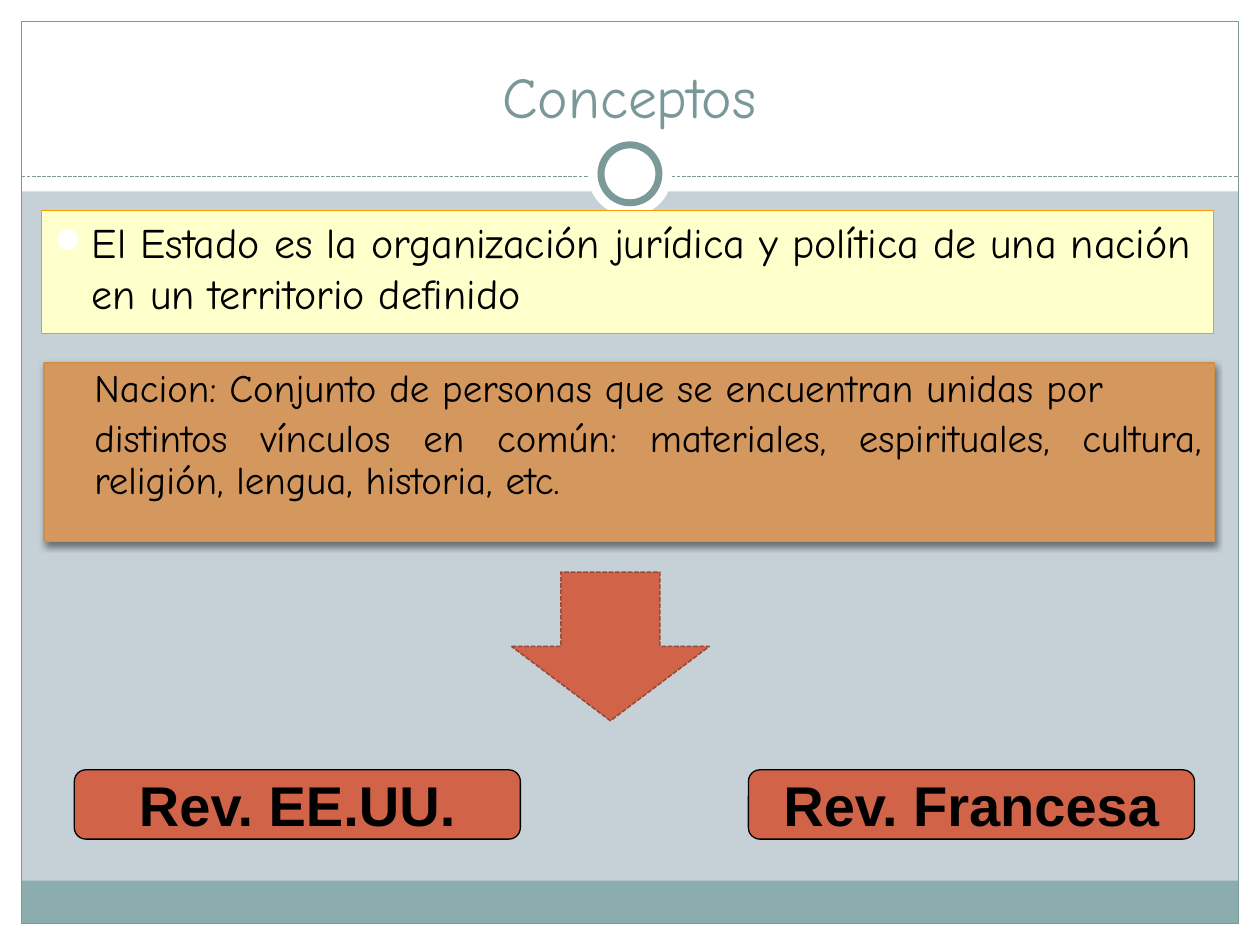
from lxml.etree import SubElement
from pptx import Presentation
from pptx.dml.color import RGBColor
from pptx.enum.dml import MSO_LINE
from pptx.enum.shapes import MSO_CONNECTOR, MSO_SHAPE as Shape
from pptx.enum.text import MSO_ANCHOR as Anchor, PP_ALIGN as Align
from pptx.oxml.ns import qn
from pptx.util import Emu, Inches, Pt

WIDTH, HEIGHT = 10, 7.5
MARGIN = 0.17
INNER_WIDTH = WIDTH - 2 * MARGIN
HEADER_HEIGHT = 1.52
DIVIDER_Y = 1.4
RING_Y = 1.38

WHITE = RGBColor(0xFF, 0xFF, 0xFF)
BLACK = RGBColor(0x00, 0x00, 0x00)
BACKGROUND = RGBColor(0xC5, 0xD1, 0xD7)
FOOTER = RGBColor(0x8C, 0xAD, 0xAE)
FRAME = RGBColor(0x7C, 0x99, 0x9A)
TITLE = RGBColor(0x7B, 0x98, 0x99)
CREAM = RGBColor(0xFF, 0xFF, 0xCC)
ORANGE = RGBColor(0xFF, 0x99, 0x00)
TAN = RGBColor(0xD4, 0x98, 0x5F)
TAN_EDGE = RGBColor(0xD1, 0x90, 0x49)
RED = RGBColor(0xD1, 0x63, 0x49)
RED_EDGE = RGBColor(0x9B, 0x49, 0x36)


def add_box(page, kind, left, top, width, height, fill=None, line=None,
            line_width=0.75, dash=None):
    box = page.shapes.add_shape(kind, Inches(left), Inches(top),
                                Inches(width), Inches(height))
    box.shadow.inherit = False
    if fill is None:
        box.fill.background()
    else:
        box.fill.solid()
        box.fill.fore_color.rgb = fill
    if line is None:
        box.line.fill.background()
    else:
        box.line.color.rgb = line
        box.line.width = Pt(line_width)
        box.line.dash_style = dash
    return box


def add_circle(page, diameter, **style):
    """Draw a white circle centred on the header's ring position."""
    return add_box(page, Shape.OVAL, (WIDTH - diameter) / 2,
                   RING_Y - diameter / 2, diameter, diameter,
                   fill=WHITE, **style)


def write_text(box, *lines, size, font="Comic Neue", color=BLACK, bold=False,
               align=Align.LEFT, anchor=Anchor.TOP, wrap=True, spacing=None,
               before=0, indent=0, bullet=None):
    frame = box.text_frame
    frame.word_wrap = wrap
    frame.vertical_anchor = anchor
    for number, line in enumerate(lines):
        para = frame.add_paragraph() if number else frame.paragraphs[0]
        para.alignment = align
        para.line_spacing = spacing
        para.space_before = Pt(before)
        props = para._p.get_or_add_pPr()
        props.set("marL", str(Inches(indent)))
        if bullet:
            props.set("indent", str(-Inches(indent)))
            tint = SubElement(props, qn("a:buClr"))
            SubElement(tint, qn("a:srgbClr"), val=str(WHITE))
            SubElement(props, qn("a:buSzPct"), val="85000")
            SubElement(props, qn("a:buChar"), char=bullet)
        span = para.add_run()
        span.text = line
        span.font.name = font
        span.font.size = Pt(size)
        span.font.bold = bold
        span.font.color.rgb = color


def add_shadow(box):
    effects = box._element.spPr.find(qn("a:effectLst"))
    shadow = SubElement(effects, qn("a:outerShdw"), blurRad=str(Pt(4)),
                        dist=str(Pt(2)), dir="5400000", rotWithShape="0")
    tint = SubElement(shadow, qn("a:srgbClr"), val=str(BLACK))
    SubElement(tint, qn("a:alpha"), val="45000")


def add_divider(page):
    y = Inches(DIVIDER_Y)
    divider = page.shapes.add_connector(
        MSO_CONNECTOR.STRAIGHT, Inches(MARGIN), y, Inches(WIDTH - MARGIN), y)
    divider.line.color.rgb = FRAME
    divider.line.width = Pt(0.75)
    divider.line.dash_style = MSO_LINE.SQUARE_DOT
    SubElement(divider._element.spPr, qn("a:effectLst"))


def add_frame(page):
    bottom = HEIGHT - MARGIN
    for area in ((0, bottom, WIDTH, MARGIN), (0, 0, WIDTH, HEADER_HEIGHT),
                 (0, 0, MARGIN, HEIGHT), (WIDTH - MARGIN, 0, MARGIN, HEIGHT)):
        add_box(page, Shape.RECTANGLE, *area, fill=WHITE)
    add_box(page, Shape.RECTANGLE, MARGIN, bottom - 0.34, INNER_WIDTH, 0.34,
            fill=FOOTER)
    add_box(page, Shape.RECTANGLE, MARGIN, MARGIN, INNER_WIDTH,
            HEIGHT - 2 * MARGIN, line=FRAME)
    add_divider(page)
    add_circle(page, 0.67)
    add_circle(page, 0.46, line=FRAME, line_width=4)


def add_title(page, text):
    box = page.shapes.add_textbox(Inches(0.33), Inches(0.25),
                                  Inches(9.33), Inches(0.83))
    write_text(box, text, size=33, color=TITLE, align=Align.CENTER,
               anchor=Anchor.BOTTOM)


def add_definitions(page):
    state = add_box(page, Shape.RECTANGLE, 0.33, 1.67, 9.3, 0.98,
                    fill=CREAM, line=ORANGE)
    write_text(state, "El Estado es la organización jurídica y política de "
               "una nación en un territorio definido",
               size=24, before=4.8, indent=0.3, bullet="●")
    nation = add_box(page, Shape.RECTANGLE, 0.35, 2.88, 9.29, 1.42,
                     fill=TAN, line=TAN_EDGE)
    add_shadow(nation)
    write_text(nation,
               "Nacion: Conjunto de personas que se encuentran unidas por",
               "distintos vínculos en común: materiales, espirituales, "
               "cultura, religión, lengua, historia, etc.",
               size=22.2, align=Align.JUSTIFY, spacing=0.9, before=4.4,
               indent=0.3)


def add_revolutions(page):
    add_box(page, Shape.DOWN_ARROW, 4.06, 4.54, 1.57, 1.18, fill=RED,
            line=RED_EDGE, line_width=0.9, dash=MSO_LINE.SQUARE_DOT)
    for column, name in enumerate(("Rev. EE.UU.", "Rev. Francesa")):
        box = add_box(page, Shape.ROUNDED_RECTANGLE, 0.59 + 5.35 * column,
                      6.11, 3.54, 0.55, fill=RED, line=BLACK)
        write_text(box, name, size=32, font="Arial", bold=True,
                   align=Align.CENTER, anchor=Anchor.MIDDLE, wrap=False)


def main():
    deck = Presentation()
    deck.slide_width, deck.slide_height = Inches(WIDTH), Inches(HEIGHT)
    page = deck.slides.add_slide(deck.slide_layouts[6])
    page.background.fill.solid()
    page.background.fill.fore_color.rgb = BACKGROUND
    add_frame(page)
    add_title(page, "Conceptos")
    add_definitions(page)
    add_revolutions(page)
    deck.save("out.pptx")


if __name__ == "__main__":
    main()
